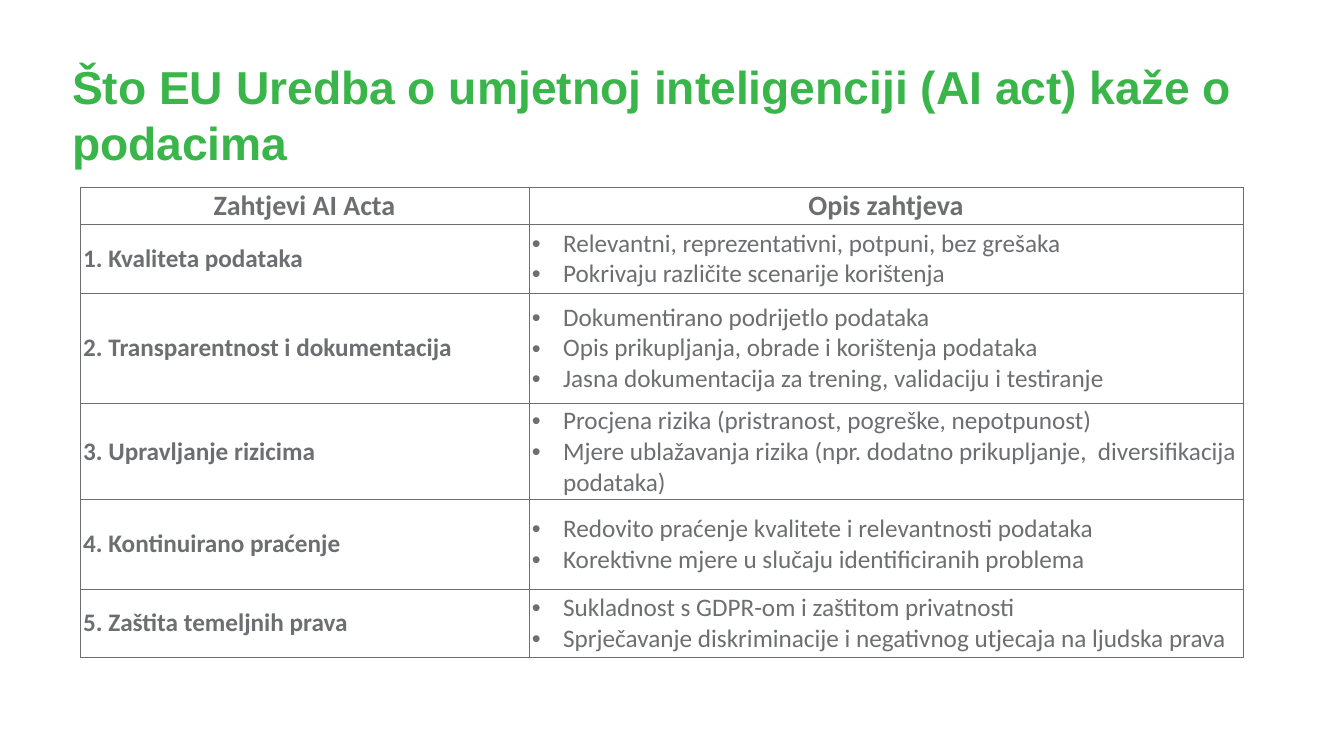
"""Builds a slide with a table of the AI Act's requirements for data."""
from lxml import etree
from pptx import Presentation
from pptx.dml.color import RGBColor
from pptx.enum.text import MSO_ANCHOR, PP_ALIGN
from pptx.oxml.ns import qn
from pptx.util import Pt

PX = 9144
GREEN = RGBColor(0x39, 0xB5, 0x4A)
GREY = RGBColor(0x6D, 0x6E, 0x71)
MIDDLE = MSO_ANCHOR.MIDDLE
LEFT, CENTER = PP_ALIGN.LEFT, PP_ALIGN.CENTER
BLANK_LAYOUT = 6
INDENT = 62

TITLE = "Što EU Uredba o umjetnoj inteligenciji (AI act) kaže o podacima"
HEADERS = ["Zahtjevi AI Acta", "Opis zahtjeva"]
COLUMN_WIDTHS = [890, 1417]
HEADER_HEIGHT = 74
REQUIREMENTS = [
    ("1. Kvaliteta podataka", 135, [
        "Relevantni, reprezentativni, potpuni, bez grešaka",
        "Pokrivaju različite scenarije korištenja"]),
    ("2. Transparentnost i dokumentacija", 220, [
        "Dokumentirano podrijetlo podataka",
        "Opis prikupljanja, obrade i korištenja podataka",
        "Jasna dokumentacija za trening, validaciju i testiranje"]),
    ("3. Upravljanje rizicima", 190, [
        "Procjena rizika (pristranost, pogreške, nepotpunost)",
        "Mjere ublažavanja rizika (npr. dodatno prikupljanje,  diversifikacija podataka)"]),
    ("4. Kontinuirano praćenje", 178, [
        "Redovito praćenje kvalitete i relevantnosti podataka",
        "Korektivne mjere u slučaju identificiranih problema"]),
    ("5. Zaštita temeljnih prava", 135, [
        "Sukladnost s GDPR-om i zaštitom privatnosti",
        "Sprječavanje diskriminacije i negativnog utjecaja na ljudska prava"]),
]


def px(length):
    """Turn px into EMU."""
    return length * PX


def style_paragraph(paragraph, font_name, size, color, bold):
    """Set the font of every run in a paragraph."""
    for span in paragraph.runs:
        span.font.name = font_name
        span.font.size = Pt(size)
        span.font.bold = bold
        span.font.color.rgb = color


def add_bullet(paragraph):
    """Give a paragraph a round bullet with a hanging indent."""
    properties = paragraph._p.get_or_add_pPr()
    properties.set("marL", str(px(INDENT)))
    properties.set("indent", str(px(-INDENT)))
    etree.SubElement(properties, qn("a:buFont"), typeface="Arial")
    etree.SubElement(properties, qn("a:buChar"), char="•")


def add_borders(cell):
    """Draw a thin grey line on all four sides of a cell."""
    properties = cell._tc.get_or_add_tcPr()
    for side in ("a:lnL", "a:lnR", "a:lnT", "a:lnB"):
        line = etree.SubElement(properties, qn(side), w=str(Pt(1)))
        fill = etree.SubElement(line, qn("a:solidFill"))
        etree.SubElement(fill, qn("a:srgbClr"), val=str(GREY))


def fill_cell(cell, lines, size, bold=False, align=LEFT, bulleted=False):
    """Write lines of text into a bordered cell."""
    cell.margin_left = cell.margin_right = px(6)
    cell.margin_top = cell.margin_bottom = px(3)
    cell.vertical_anchor = MIDDLE
    add_borders(cell)
    cell.fill.background()
    cell.text_frame.text = "\n".join(lines)
    for paragraph in cell.text_frame.paragraphs:
        paragraph.alignment = align
        if bulleted:
            add_bullet(paragraph)
        style_paragraph(paragraph, "Calibri", size, GREY, bold)


def add_title(page):
    """Add the slide's heading."""
    box = page.shapes.add_textbox(px(133), px(104), px(2399), px(244))
    frame = box.text_frame
    frame.word_wrap = True
    frame.vertical_anchor = MIDDLE
    frame.text = TITLE
    style_paragraph(frame.paragraphs[0], "Arial", 66, GREEN, True)


def add_requirements_table(page):
    """Add the table of requirements and their descriptions."""
    heights = [HEADER_HEIGHT] + [height for _, height, _ in REQUIREMENTS]
    table = page.shapes.add_table(
        len(heights), len(COLUMN_WIDTHS), px(159), px(372),
        px(sum(COLUMN_WIDTHS)), px(sum(heights))).table
    table.first_row = False
    table.horz_banding = False
    for column, width in zip(table.columns, COLUMN_WIDTHS):
        column.width = px(width)
    for row, height in zip(table.rows, heights):
        row.height = px(height)
    for index, header in enumerate(HEADERS):
        fill_cell(table.cell(0, index), [header], 40, bold=True, align=CENTER)
    for index, (name, _, details) in enumerate(REQUIREMENTS, start=1):
        fill_cell(table.cell(index, 0), [name], 36, bold=True)
        fill_cell(table.cell(index, 1), details, 36, bulleted=True)


def main():
    """Build and save the deck."""
    deck = Presentation()
    deck.slide_width, deck.slide_height = px(2666), px(1500)
    page = deck.slides.add_slide(deck.slide_layouts[BLANK_LAYOUT])
    add_title(page)
    add_requirements_table(page)
    deck.save("out.pptx")


if __name__ == "__main__":
    main()
